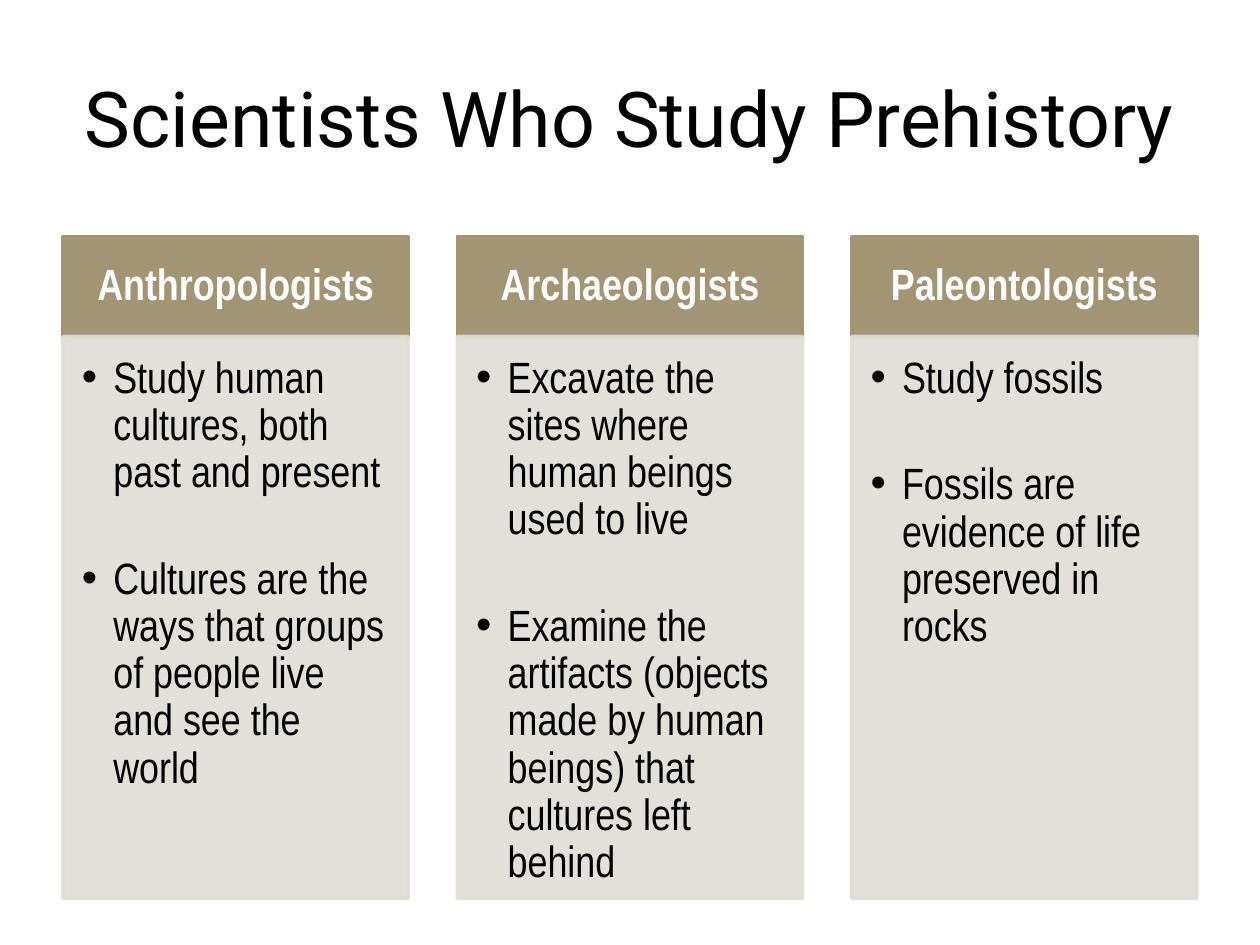
from dataclasses import dataclass

from lxml import etree
from pptx import Presentation
from pptx.dml.color import RGBColor
from pptx.enum.shapes import MSO_SHAPE
from pptx.enum.text import MSO_ANCHOR, MSO_AUTO_SIZE, PP_ALIGN
from pptx.oxml.ns import qn
from pptx.util import Inches, Pt

RECTANGLE = MSO_SHAPE.RECTANGLE
TOP, MIDDLE = MSO_ANCHOR.TOP, MSO_ANCHOR.MIDDLE
LEFT, CENTER = PP_ALIGN.LEFT, PP_ALIGN.CENTER
NO_AUTOFIT = MSO_AUTO_SIZE.NONE
TITLE_ONLY = 5


@dataclass(frozen=True)
class Theme:
    ink: RGBColor = RGBColor(0x00, 0x00, 0x00)
    white: RGBColor = RGBColor(0xFF, 0xFF, 0xFF)
    header: RGBColor = RGBColor(0xA1, 0x95, 0x74)
    panel: RGBColor = RGBColor(0xE0, 0xDD, 0xD6)
    panel_opacity: int = 90
    title_font: str = "Roboto"
    body_font: str = "Arial Narrow"
    title_size: Pt = Pt(44)
    body_size: Pt = Pt(25)
    outline: Pt = Pt(2)
    line_spacing: float = 0.9
    item_gap: Pt = Pt(34)


THEME = Theme()

COLUMNS = [
    ("Anthropologists", [
        "Study human cultures, both past and present",
        "Cultures are the ways that groups of people live and see the world",
    ]),
    ("Archaeologists", [
        "Excavate the sites where human beings used to live",
        "Examine the artifacts (objects made by human beings) that cultures left behind",
    ]),
    ("Paleontologists", [
        "Study fossils",
        "Fossils are evidence of life preserved in rocks",
    ]),
]


def add_span(para, text, font, size, color, bold=False):
    span = para.add_run()
    span.text = text
    span.font.name = font
    span.font.size = size
    span.font.color.rgb = color
    span.font.bold = bold


def set_frame(frame, anchor, insets):
    frame.word_wrap = True
    frame.auto_size = NO_AUTOFIT
    frame.vertical_anchor = anchor
    (frame.margin_left, frame.margin_top,
     frame.margin_right, frame.margin_bottom) = map(Inches, insets)


def set_bullet(para, indent):
    properties = para._p.get_or_add_pPr()
    properties.set("marL", str(indent))
    properties.set("indent", str(-indent))
    etree.SubElement(properties, qn("a:buFont"), typeface="Arial")
    etree.SubElement(properties, qn("a:buChar"), char="•")


def add_block(page, box, color, opacity=100):
    block = page.shapes.add_shape(RECTANGLE, *box)
    block.shadow.inherit = False
    block.fill.solid()
    block.fill.fore_color.rgb = color
    block.line.color.rgb = color
    block.line.width = THEME.outline
    if opacity < 100:
        for tone in block._element.spPr.iter(qn("a:srgbClr")):
            etree.SubElement(tone, qn("a:alpha"), val=str(opacity * 1000))
    return block


def place_title(page, box, text):
    title = page.shapes.title
    title.left, title.top, title.width, title.height = box
    set_frame(title.text_frame, MIDDLE, (0.1, 0.05, 0.1, 0.05))
    para = title.text_frame.paragraphs[0]
    para.alignment = CENTER
    add_span(para, text, THEME.title_font, THEME.title_size, THEME.ink)


def place_column(page, box, heading, items):
    left, top, width, height = box
    header_height = Inches(0.79)

    # Header band
    header = add_block(page, (left, top, width, header_height), THEME.header)
    set_frame(header.text_frame, MIDDLE, (0.19, 0.11, 0.19, 0.11))
    para = header.text_frame.paragraphs[0]
    para.alignment = CENTER
    para.line_spacing = THEME.line_spacing
    add_span(para, heading, THEME.body_font, THEME.body_size, THEME.white, bold=True)

    # Bulleted panel below it
    panel_box = (left, top + header_height, width, height - header_height)
    panel = add_block(page, panel_box, THEME.panel, THEME.panel_opacity)
    frame = panel.text_frame
    set_frame(frame, TOP, (0.15, 0.15, 0.19, 0.22))
    for index, item in enumerate(items):
        para = frame.add_paragraph() if index else frame.paragraphs[0]
        para.alignment = LEFT
        para.line_spacing = THEME.line_spacing
        para.space_before = THEME.item_gap if index else Pt(0)
        set_bullet(para, Inches(0.25))
        add_span(para, item, THEME.body_font, THEME.body_size, THEME.ink)


def place_columns(page, box, columns):
    left, top, width, height = box
    column_width = Inches(2.74)
    pitch = (width - column_width) // (len(columns) - 1)
    for index, (heading, items) in enumerate(columns):
        column_box = (left + index * pitch, top, column_width, height)
        place_column(page, column_box, heading, items)


def main():
    deck = Presentation()
    deck.slide_width, deck.slide_height = Inches(10), Inches(7.5)
    page = deck.slides.add_slide(deck.slide_layouts[TITLE_ONLY])
    margin, content_width = Inches(0.5), Inches(9)
    place_title(page, (margin, Inches(0.3), content_width, Inches(1.25)),
                "Scientists Who Study Prehistory")
    place_columns(page, (margin, Inches(1.88), content_width, Inches(5.25)), COLUMNS)
    deck.save("out.pptx")


if __name__ == "__main__":
    main()
